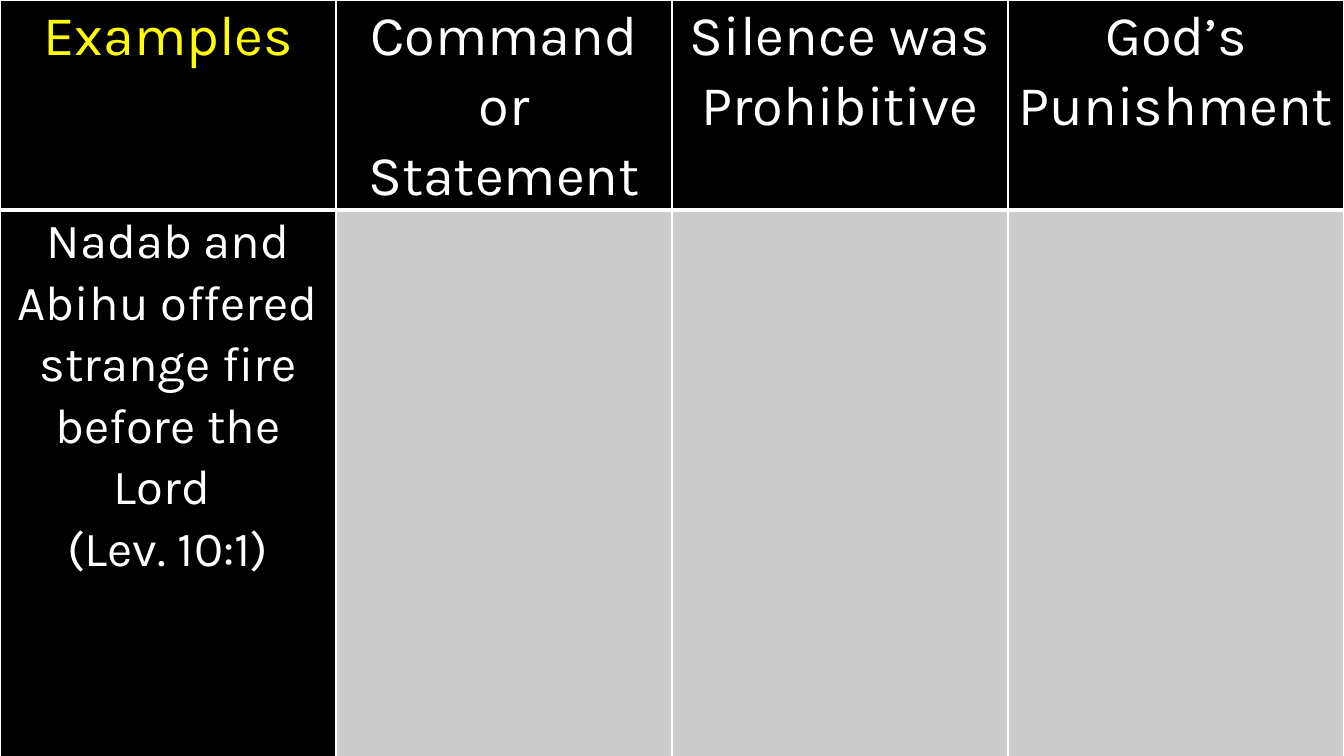
from lxml import etree
from pptx import Presentation
from pptx.dml.color import RGBColor
from pptx.enum.text import PP_ALIGN
from pptx.oxml.ns import qn
from pptx.util import Pt

CENTER = PP_ALIGN.CENTER
BLANK_LAYOUT = 6
SLIDE_WIDTH, SLIDE_HEIGHT = Pt(960), Pt(540)
ROW_HEIGHTS = [Pt(126), Pt(414)]
FONT = "Karla"
BLACK, WHITE, YELLOW, GREY = "000000", "FFFFFF", "FFFF00", "CCCCCC"
HEADINGS = [
    ("Examples", YELLOW),
    ("Command or Statement", WHITE),
    ("Silence was Prohibitive", WHITE),
    ("God’s Punishment", WHITE),
]
EXAMPLE = ["Nadab and Abihu offered strange fire before the Lord ", "(Lev. 10:1)"]


def set_fill(fill, color):
    fill.solid()
    fill.fore_color.rgb = RGBColor.from_string(color)


def add_borders(cell, top, bottom):
    """Draw white borders; the top and bottom widths are in points."""
    properties = cell._tc.get_or_add_tcPr()
    for side, width in (("L", 1), ("R", 1), ("T", top), ("B", bottom)):
        line = etree.SubElement(properties, qn(f"a:ln{side}"), w=str(Pt(width)))
        fill = etree.SubElement(line, qn("a:solidFill"))
        etree.SubElement(fill, qn("a:srgbClr"), val=WHITE)


def style_cell(cell, fill, top, bottom):
    add_borders(cell, top, bottom)
    set_fill(cell.fill, fill)
    cell.margin_left = cell.margin_right = Pt(5)
    cell.margin_top = cell.margin_bottom = Pt(0)


def write_cell(cell, lines, size, color):
    frame = cell.text_frame
    for index, line in enumerate(lines):
        para = frame.add_paragraph() if index else frame.paragraphs[0]
        para.alignment = CENTER
        para.line_spacing = 1.07
        span = para.add_run()
        span.text = line
        span.font.name = FONT
        span.font.size = Pt(size)
        span.font.bold = False
        span.font.color.rgb = RGBColor.from_string(color)


def add_examples_table(page):
    columns = len(HEADINGS)
    table = page.shapes.add_table(
        len(ROW_HEIGHTS), columns, Pt(0), Pt(0), SLIDE_WIDTH, SLIDE_HEIGHT
    ).table
    table.first_row = table.horz_banding = False
    for row, height in zip(table.rows, ROW_HEIGHTS):
        row.height = height
    for column, (heading, color) in enumerate(HEADINGS):
        header, body = table.cell(0, column), table.cell(1, column)
        style_cell(header, BLACK, top=1, bottom=3)
        write_cell(header, [heading], 40, color)
        style_cell(body, GREY if column else BLACK, top=3, bottom=1)
    write_cell(table.cell(1, 0), EXAMPLE, 35, WHITE)


def main():
    deck = Presentation()
    deck.slide_width, deck.slide_height = SLIDE_WIDTH, SLIDE_HEIGHT
    page = deck.slides.add_slide(deck.slide_layouts[BLANK_LAYOUT])
    set_fill(page.background.fill, BLACK)
    add_examples_table(page)
    deck.save("out.pptx")


if __name__ == "__main__":
    main()
